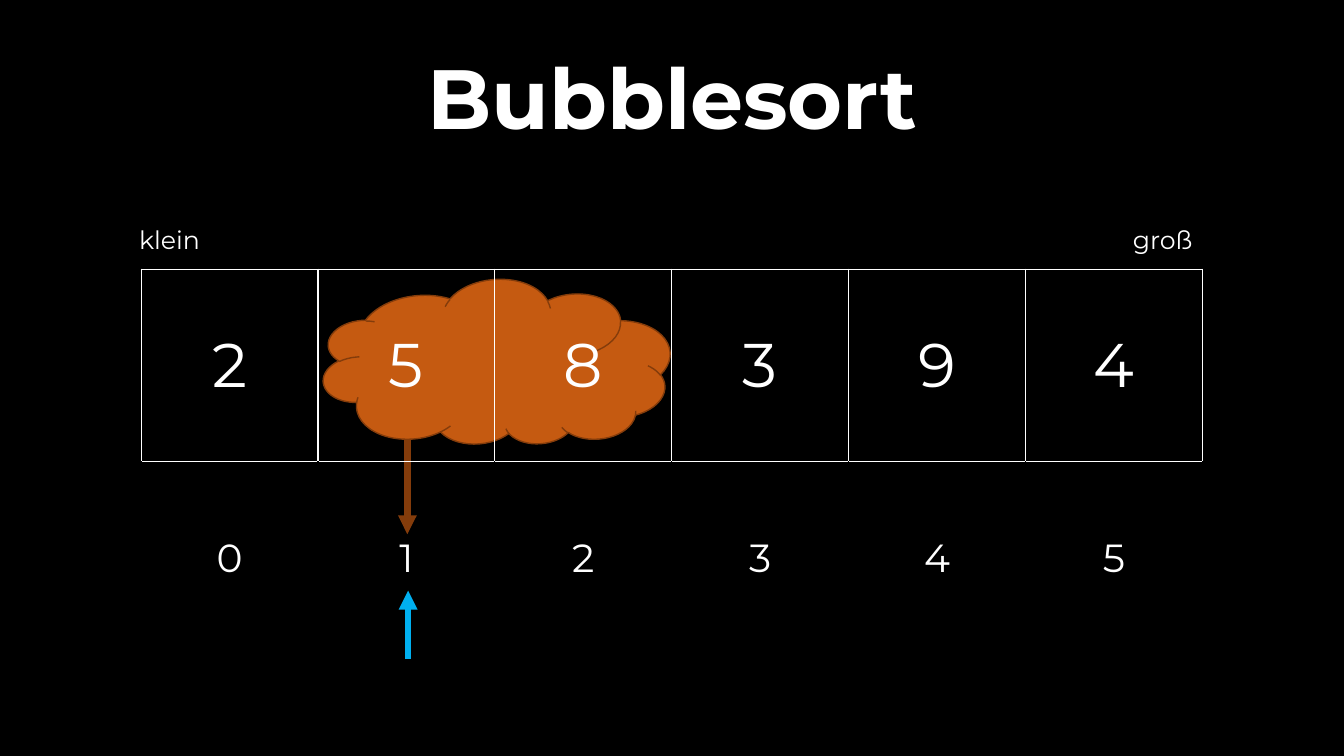
from dataclasses import dataclass

from lxml.etree import SubElement
from pptx import Presentation
from pptx.dml.color import RGBColor as RGB
from pptx.enum.shapes import MSO_CONNECTOR as CONNECTOR, MSO_SHAPE as SHAPE
from pptx.enum.text import MSO_ANCHOR as ANCHOR, PP_ALIGN as ALIGN
from pptx.oxml.ns import qn
from pptx.util import Pt


@dataclass(frozen=True)
class Theme:
    font: str = "Montserrat"
    black: str = "000000"
    white: str = "FFFFFF"
    bubble: str = "C55A11"
    bubble_edge: str = "843C0B"
    pointer: str = "00B0F0"
    title_size: int = 60
    value_size: int = 44
    index_size: int = 28
    label_size: int = 18


theme = Theme()


def write(frame, text, size, align, bold=False):
    paragraph = frame.paragraphs[0]
    paragraph.alignment = align
    run = paragraph.add_run()
    run.text = text
    run.font.name = theme.font
    run.font.size = Pt(size)
    run.font.bold = bold
    run.font.color.rgb = RGB.from_string(theme.white)
    return paragraph


def add_arrow(x, start_y, end_y, color):
    arrow = slide.shapes.add_connector(
        CONNECTOR.STRAIGHT, Pt(x), Pt(start_y), Pt(x), Pt(end_y))
    arrow.line.color.rgb = RGB.from_string(color)
    arrow.line.width = Pt(4.5)
    SubElement(arrow.line._get_or_add_ln(), qn("a:tailEnd"), type="triangle")
    SubElement(arrow._element.spPr, qn("a:effectLst"))


prs = Presentation()
prs.slide_width, prs.slide_height = Pt(960), Pt(540)
slide = prs.slides.add_slide(prs.slide_layouts[5])
slide.background.fill.solid()
slide.background.fill.fore_color.rgb = RGB.from_string(theme.black)

# Title
title = slide.shapes.title
title.left, title.top, title.width, title.height = Pt(11), Pt(22.3), Pt(938), Pt(102.2)
title.text_frame.vertical_anchor = ANCHOR.MIDDLE
heading = write(title.text_frame, "Bubblesort", theme.title_size, ALIGN.CENTER, bold=True)
heading.line_spacing = 0.9
heading.space_before = Pt(10)

# Bubble around the compared pair, behind the array
add_arrow(291, 303.8, 381.6, theme.bubble_edge)
bubble = slide.shapes.add_shape(SHAPE.CLOUD, Pt(230.4), Pt(200.2), Pt(248.4), Pt(119.5))
bubble.shadow.inherit = False
bubble.rotation = 355.5
bubble._element.spPr.find(qn("a:xfrm")).set("flipV", "1")
bubble.fill.solid()
bubble.fill.fore_color.rgb = RGB.from_string(theme.bubble)
bubble.line.color.rgb = RGB.from_string(theme.bubble_edge)
bubble.line.width = Pt(1)

# Array values above their indices
values = [2, 5, 8, 3, 9, 4]
rows = [
    (values, theme.value_size, theme.white),
    (range(len(values)), theme.index_size, theme.black),
]
array = slide.shapes.add_table(
    len(rows), len(values), Pt(100.8), Pt(192.3), Pt(758.16), Pt(275)).table
array.first_row = array.horz_banding = False
for row, (numbers, size, edge) in enumerate(rows):
    for column, number in enumerate(numbers):
        cell = array.cell(row, column)
        cell.vertical_anchor = ANCHOR.MIDDLE
        write(cell.text_frame, str(number), size, ALIGN.CENTER)
        properties = cell._tc.get_or_add_tcPr()
        for side, color in (("L", edge), ("R", edge), ("T", theme.white), ("B", edge)):
            # The edge shared by both rows stays white
            if row == 0:
                color = theme.white
            border = SubElement(properties, qn(f"a:ln{side}"), w=str(Pt(1)))
            fill = SubElement(border, qn("a:solidFill"))
            SubElement(fill, qn("a:srgbClr"), val=color)
        cell.fill.background()

# Labels for the two ends of the order
for text, left, align in (("klein", 92.2, ALIGN.LEFT), ("groß", 750.2, ALIGN.RIGHT)):
    label = slide.shapes.add_textbox(Pt(left), Pt(157), Pt(108.7), Pt(29))
    label.text_frame.word_wrap = True
    write(label.text_frame, text, theme.label_size, align)

# Current position
add_arrow(291.5, 470.9, 421.9, theme.pointer)

prs.save("out.pptx")
